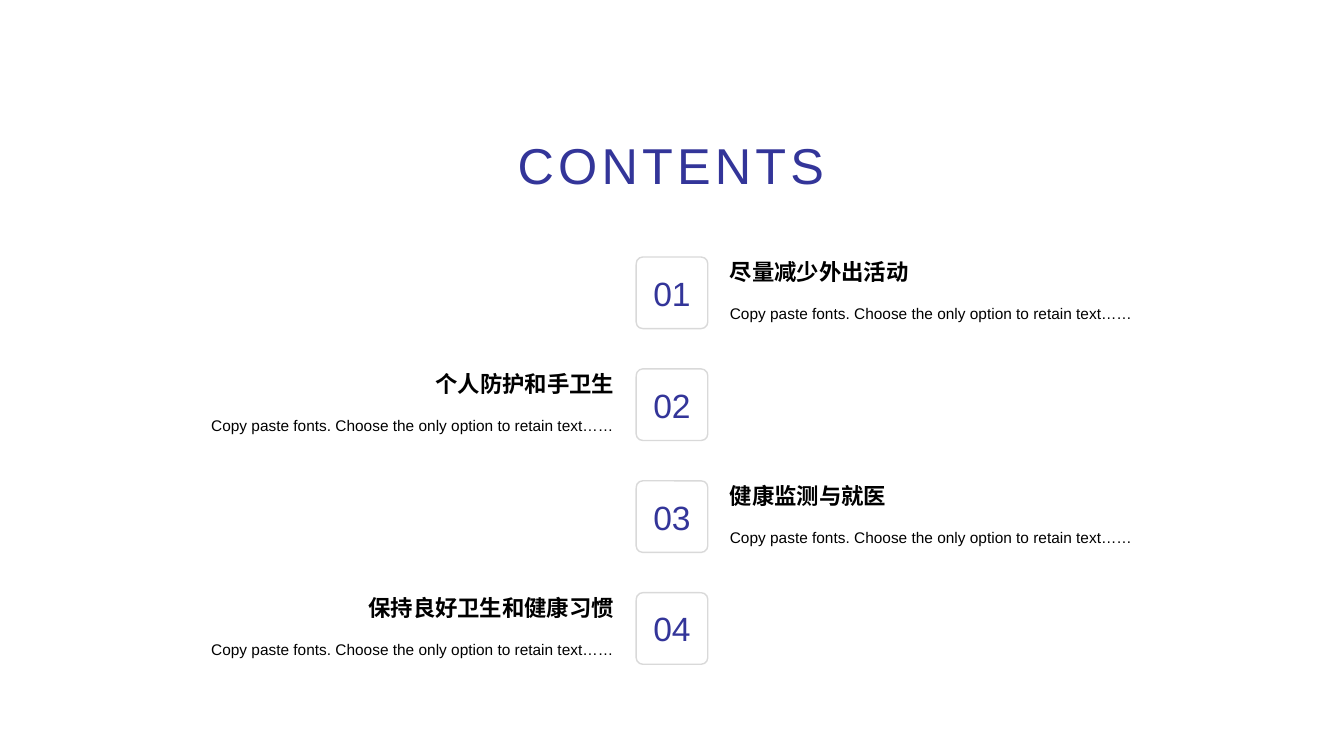
from pptx import Presentation
from pptx.dml.color import RGBColor
from pptx.enum.shapes import MSO_SHAPE
from pptx.enum.text import MSO_ANCHOR, PP_ALIGN
from pptx.util import Inches, Pt

ROUNDED = MSO_SHAPE.ROUNDED_RECTANGLE
TOP, MIDDLE, BOTTOM = MSO_ANCHOR.TOP, MSO_ANCHOR.MIDDLE, MSO_ANCHOR.BOTTOM
LEFT, CENTER, RIGHT = PP_ALIGN.LEFT, PP_ALIGN.CENTER, PP_ALIGN.RIGHT

INDIGO, BLACK, GREY = "333599", "000000", "D9D9D9"
TITLE_FONT = {"name": "Arial", "size": Pt(36)}
NUMBER_FONT = {"name": "Arial", "size": Pt(24)}
HEADING_FONT = {"name": "Arial", "size": Pt(16), "bold": True}
DETAIL_FONT = {"name": "Arial", "size": Pt(11)}

HEADINGS = ["尽量减少外出活动", "个人防护和手卫生", "健康监测与就医", "保持良好卫生和健康习惯"]
DETAIL = "Copy paste fonts. Choose the only option to retain text……"

BADGE_SIZE = 0.71
ROW_STEP = 1.11
TEXT_WIDTH = 4.51
TEXT_GAP = 0.12
HEADING_HEIGHT = 0.37
DETAIL_HEIGHT = 0.42


def color(value):
    """Return the colour for a hex string."""
    return RGBColor.from_string(value)


def write(shape, text, font, ink, align, anchor, line_spacing=1.0):
    """Put one formatted paragraph in a shape and return its span."""
    frame = shape.text_frame
    frame.word_wrap = True
    frame.vertical_anchor = anchor
    para = frame.paragraphs[0]
    para.alignment = align
    para.line_spacing = line_spacing
    span = para.add_run()
    span.text = text
    for name, value in font.items():
        setattr(span.font, name, value)
    span.font.color.rgb = color(ink)
    return span


def add_text(page, box, *style):
    """Add a text box at left, top, width, height in inches."""
    return write(page.shapes.add_textbox(*map(Inches, box)), *style)


def add_title(page, box):
    """Add the letter-spaced title."""
    span = add_text(page, box, "CONTENTS", TITLE_FONT, INDIGO, CENTER, MIDDLE)
    span.font._element.set("spc", "300")


def add_badge(page, left, top, number):
    """Add the outlined square that holds an entry's number."""
    badge = page.shapes.add_shape(ROUNDED, *map(Inches, (left, top, BADGE_SIZE, BADGE_SIZE)))
    badge.adjustments[0] = 0.092
    badge.shadow.inherit = False
    badge.fill.background()
    badge.line.color.rgb = color(GREY)
    badge.line.width = Pt(1)
    write(badge, f"{number:02d}", NUMBER_FONT, INDIGO, CENTER, MIDDLE)


def add_entry(page, left, top, number, heading):
    """Add a badge with its text, right of it for odd numbers and left for even."""
    add_badge(page, left, top, number)
    if number % 2:
        text_left, align = left + BADGE_SIZE + TEXT_GAP, LEFT
    else:
        text_left, align = left - TEXT_GAP - TEXT_WIDTH, RIGHT
    text_top = top - (HEADING_HEIGHT + DETAIL_HEIGHT - BADGE_SIZE) / 2
    add_text(page, (text_left, text_top, TEXT_WIDTH, HEADING_HEIGHT),
             heading, HEADING_FONT, BLACK, align, BOTTOM)
    add_text(page, (text_left, text_top + HEADING_HEIGHT, TEXT_WIDTH, DETAIL_HEIGHT),
             DETAIL, DETAIL_FONT, BLACK, align, TOP, 1.5)


def add_entries(page, left, top):
    """Stack the entries at an equal step below the given point."""
    for index, heading in enumerate(HEADINGS):
        add_entry(page, left, top + index * ROW_STEP, index + 1, heading)


def main():
    """Build the contents slide and save the deck."""
    deck = Presentation()
    deck.slide_width, deck.slide_height = Inches(13.33), Inches(7.5)
    page = deck.slides.add_slide(deck.slide_layouts[6])
    add_title(page, (4.63, 1.12, 4.05, 1.02))
    add_entries(page, 6.31, 2.55)
    deck.save("out.pptx")


if __name__ == "__main__":
    main()
